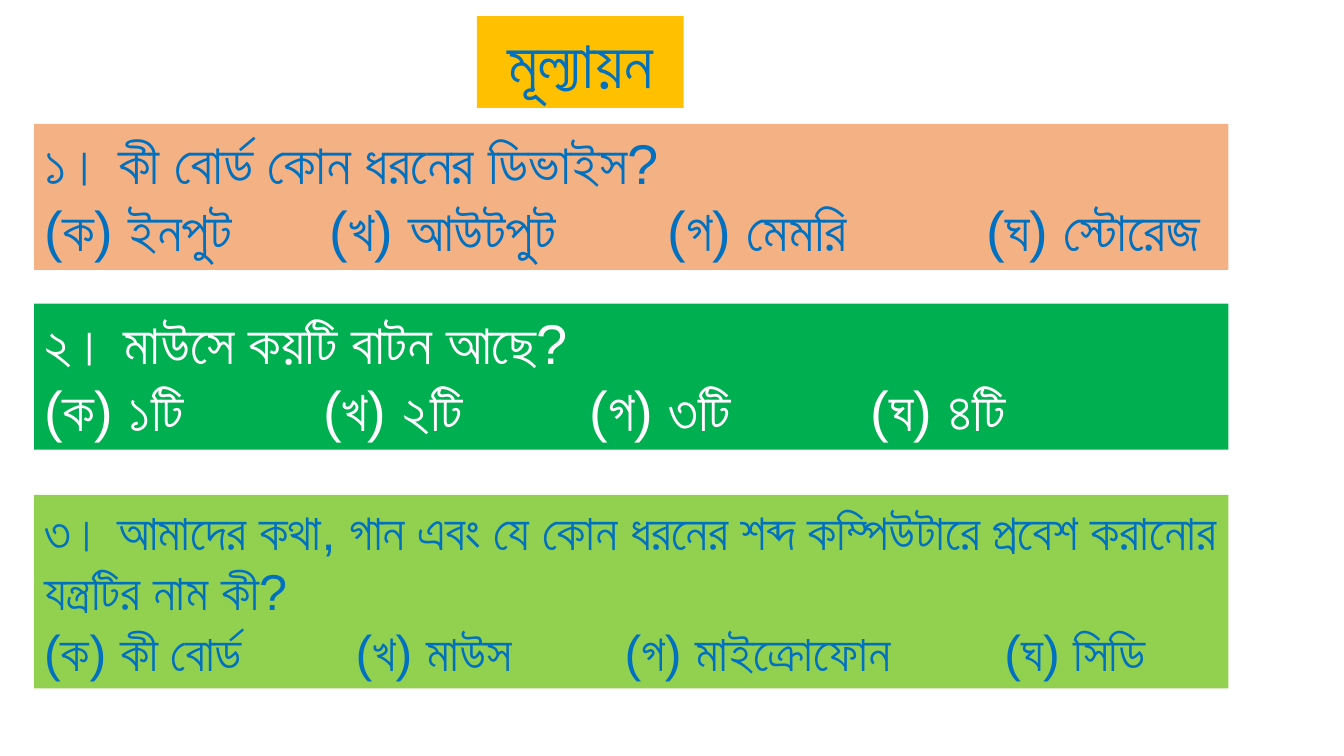
from dataclasses import dataclass

from lxml import etree
from pptx import Presentation
from pptx.dml.color import RGBColor
from pptx.enum.text import MSO_AUTO_SIZE, PP_ALIGN
from pptx.oxml.ns import qn
from pptx.util import Cm, Pt

CENTER = PP_ALIGN.CENTER
LEFT = PP_ALIGN.LEFT
FIT_SHAPE = MSO_AUTO_SIZE.SHAPE_TO_FIT_TEXT


@dataclass(frozen=True)
class Theme:
    """Colours and type sizes of the slide."""
    font: str = "Arial"
    blue: str = "0070C0"
    white: str = "FFFFFF"
    gold: str = "FFC000"
    peach: str = "F4B183"
    green: str = "00B050"
    lime: str = "92D050"
    title_size: int = 48
    question_size: int = 40
    long_question_size: int = 36


THEME = Theme()
QUESTION_LEFT, QUESTION_WIDTH = 0.86, 30.1

QUESTIONS = [
    (3.12, 3.68, THEME.peach, THEME.blue, THEME.question_size,
     "১। কী বোর্ড কোন ধরনের ডিভাইস?",
     ["(ক) ইনপুট", "(খ) আউটপুট", "(গ) মেমরি", "(ঘ) স্টোরেজ"],
     [7.2, 15.72, 23.75]),
    (7.65, 3.68, THEME.green, THEME.white, THEME.question_size,
     "২। মাউসে কয়টি বাটন আছে?",
     ["(ক) ১টি", "(খ) ২টি", "(গ) ৩টি", "(ঘ) ৪টি"],
     [7.04, 13.75, 20.83]),
    (12.47, 4.88, THEME.lime, THEME.blue, THEME.long_question_size,
     "৩। আমাদের কথা, গান এবং যে কোন ধরনের শব্দ কম্পিউটারে প্রবেশ করানোর যন্ত্রটির নাম কী?",
     ["(ক) কী বোর্ড", "(খ) মাউস", "(গ) মাইক্রোফোন", "(ঘ) সিডি"],
     [7.85, 14.63, 24.2]),
]


def add_panel(slide, left, top, width, height, fill):
    """Add a filled text box and return its text frame."""
    panel = slide.shapes.add_textbox(Cm(left), Cm(top), Cm(width), Cm(height))
    panel.fill.solid()
    panel.fill.fore_color.rgb = RGBColor.from_string(fill)
    text_frame = panel.text_frame
    text_frame.word_wrap = True
    text_frame.auto_size = FIT_SHAPE
    return text_frame


def write(paragraph, text, size, color, alignment=LEFT):
    """Write styled text into a paragraph."""
    paragraph.alignment = alignment
    paragraph.add_run().text = text
    paragraph.font.name = THEME.font
    paragraph.font.size = Pt(size)
    paragraph.font.color.rgb = RGBColor.from_string(color)


def add_tab_stops(paragraph, positions):
    """Give a paragraph left tab stops at positions in centimetres."""
    properties = paragraph._p.get_or_add_pPr()
    tab_list = etree.SubElement(properties, qn("a:tabLst"))
    for position in positions:
        etree.SubElement(tab_list, qn("a:tab"), pos=str(Cm(position)), algn="l")


def add_question(slide, top, height, fill, color, size, question, options, tab_stops):
    """Add a question panel with its options on one tabbed line."""
    text_frame = add_panel(slide, QUESTION_LEFT, top, QUESTION_WIDTH, height, fill)
    write(text_frame.paragraphs[0], question, size, color)
    option_line = text_frame.add_paragraph()
    add_tab_stops(option_line, tab_stops)
    write(option_line, "\t".join(options), size, color)


def main():
    """Build the evaluation slide and save it."""
    presentation = Presentation()
    presentation.slide_width = Cm(33.87)
    presentation.slide_height = Cm(19.05)
    slide = presentation.slides.add_slide(presentation.slide_layouts[6])
    title = add_panel(slide, 12.02, 0.41, 5.21, 2.31, THEME.gold)
    write(title.paragraphs[0], "মূল্যায়ন", THEME.title_size, THEME.blue, CENTER)
    for question in QUESTIONS:
        add_question(slide, *question)
    presentation.save("out.pptx")


if __name__ == "__main__":
    main()
